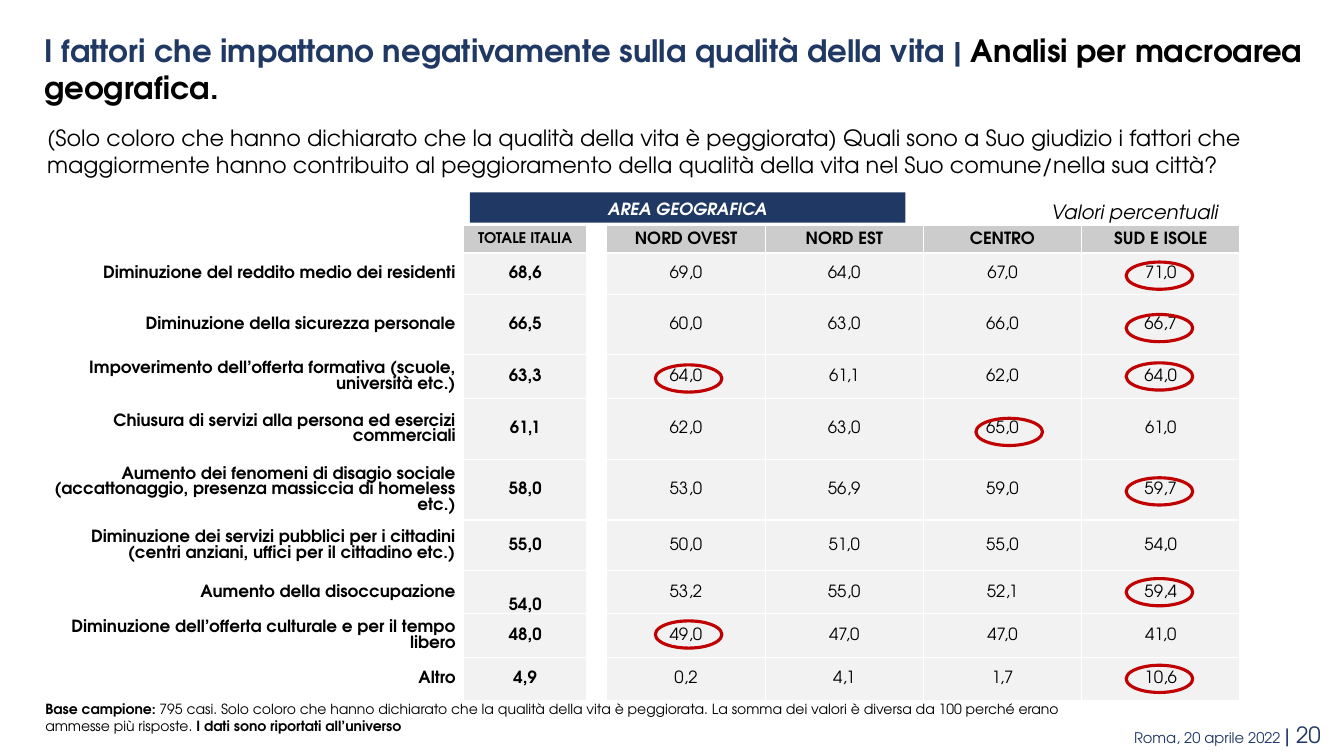
from pptx import Presentation
from pptx.util import Inches, Pt
from pptx.dml.color import RGBColor
from pptx.enum.shapes import MSO_SHAPE as Shape
from pptx.enum.text import PP_ALIGN as Align, MSO_ANCHOR as Anchor, MSO_AUTO_SIZE as Auto
from pptx.oxml import parse_xml
from pptx.oxml.ns import nsdecls

FONT = "TeX Gyre Adventor"
NAVY = RGBColor(0x20, 0x38, 0x64)
BLACK = RGBColor(0, 0, 0)
WHITE = RGBColor(255, 255, 255)
HEAD = RGBColor(0xCC, 0xCC, 0xCC)
PALE = RGBColor(0xF2, 0xF2, 0xF2)
RED = RGBColor(0xC0, 0, 0)


def write(frame, runs, align=Align.LEFT, anchor=Anchor.TOP, pad=(0.1, 0.05)):
    """Fill a text frame with (text, size, colour, bold, italic) runs."""
    form = {"word_wrap": True, "auto_size": Auto.NONE, "vertical_anchor": anchor,
            "margin_left": Inches(pad[0]), "margin_right": Inches(pad[0]),
            "margin_top": Inches(pad[1]), "margin_bottom": Inches(pad[1])}
    for key, value in form.items():
        setattr(frame, key, value)
    para = frame.paragraphs[0]
    para.alignment = align
    for text, size, color, bold, italic in runs:
        run = para.add_run()
        run.text = text
        run.font.color.rgb = color
        look = {"name": FONT, "size": Pt(size), "bold": bold, "italic": italic}
        for key, value in look.items():
            setattr(run.font, key, value)
    return para


def place(kind, box, fill=None):
    """Add a preset shape without shadow or outline."""
    shape = slide.shapes.add_shape(kind, *map(Inches, box))
    shape.shadow.inherit = False
    shape.line.fill.background()
    if fill is None:
        shape.fill.background()
    else:
        shape.fill.solid()
        shape.fill.fore_color.rgb = fill
    return shape


prs = Presentation()
prs.slide_width, prs.slide_height = Inches(13.33), Inches(7.5)
slide = prs.slides.add_slide(prs.slide_layouts[5])

# Title
title = slide.shapes.title
spot = {"left": 0.37, "top": 0.27, "width": 12.91, "height": 0.82}
for key, value in spot.items():
    setattr(title, key, Inches(value))
write(title.text_frame, [
    ("I fattori che impattano negativamente sulla qualità della vita | ", 22, NAVY, True, False),
    ("Analisi per macroarea geografica.", 22, BLACK, True, False)], pad=(0.07, 0.04))

# Sample note
note = place(Shape.RECTANGLE, (0.37, 6.9, 10.7, 0.44), WHITE)
write(note.text_frame, [
    ("Base campione:", 10, BLACK, True, False),
    (" 795 casi. Solo coloro che hanno dichiarato che la qualità della vita è peggiorata. "
     "La somma dei valori è diversa da 100 perché erano ammesse più risposte. ",
     10, BLACK, False, False),
    ("I dati sono riportati all’universo", 10, BLACK, True, False)], pad=(0.08, 0.05))

# Question, unit and footer
question = ("(Solo coloro che hanno dichiarato che la qualità della vita è peggiorata) "
            "Quali sono a Suo giudizio i fattori che maggiormente hanno contribuito al "
            "peggioramento della qualità della vita nel Suo comune/nella sua città?")
texts = [
    ((0.37, 1.18, 12.67, 0.64), [(question, 16, BLACK, False, False)], Align.LEFT),
    ((10.33, 1.93, 2.33, 0.34), [("Valori percentuali", 14, BLACK, False, True)], Align.LEFT),
    ((6.27, 7.11, 6.93, 0.37), [("Roma, 20 aprile 2022 ", 10.5, NAVY, False, False),
                                ("| 20", 16, NAVY, False, False)], Align.RIGHT),
]
for box, runs, align in texts:
    area = slide.shapes.add_textbox(*map(Inches, box))
    write(area.text_frame, runs, align)

# Band above the areas
band = place(Shape.RECTANGLE, (4.66, 1.91, 4.32, 0.3), NAVY)
para = write(band.text_frame, [("AREA GEOGRAFICA", 12, WHITE, True, True)],
             Align.CENTER, Anchor.MIDDLE)
para.line_spacing = 1.1

# Table: label, total, then the four areas
rows = [
    ("", "TOTALE ITALIA", "NORD OVEST", "NORD EST", "CENTRO", "SUD E ISOLE"),
    ("Diminuzione del reddito medio dei residenti", "68,6", "69,0", "64,0", "67,0", "71,0"),
    ("Diminuzione della sicurezza personale", "66,5", "60,0", "63,0", "66,0", "66,7"),
    ("Impoverimento dell’offerta formativa (scuole, università etc.)",
     "63,3", "64,0", "61,1", "62,0", "64,0"),
    ("Chiusura di servizi alla persona ed esercizi commerciali",
     "61,1", "62,0", "63,0", "65,0", "61,0"),
    ("Aumento dei fenomeni di disagio sociale (accattonaggio, presenza massiccia di homeless etc.)",
     "58,0", "53,0", "56,9", "59,0", "59,7"),
    ("Diminuzione dei servizi pubblici per i cittadini (centri anziani, uffici per il cittadino etc.)",
     "55,0", "50,0", "51,0", "55,0", "54,0"),
    ("Aumento della disoccupazione", "54,0", "53,2", "55,0", "52,1", "59,4"),
    ("Diminuzione dell’offerta culturale e per il tempo libero",
     "48,0", "49,0", "47,0", "47,0", "41,0"),
    ("Altro", "4,9", "0,2", "4,1", "1,7", "10,6"),
]
wide = [4.06, 0.07, 1.22, 0.06, 0.14, 1.57, 1.57, 1.57, 1.57, 0.13]
high = [0.27, 0.41, 0.6, 0.43, 0.61, 0.6, 0.5, 0.43, 0.43, 0.43]
slots = {0: 0, 2: 1, 5: 2, 6: 3, 7: 4, 8: 5}
table = slide.shapes.add_table(len(high), len(wide), Inches(0.47), Inches(2.24),
                               Inches(sum(wide)), Inches(sum(high))).table
table.first_row = table.horz_banding = False
for col, size in zip(table.columns, wide):
    col.width = Inches(size)
for row, size in zip(table.rows, high):
    row.height = Inches(size)

for r, row in enumerate(rows):
    for c in range(len(wide)):
        cell = table.cell(r, c)
        text = row[slots[c]] if c in slots else ""
        margin = {"margin_left": 0.01, "margin_right": 0.01, "margin_top": 0.01, "margin_bottom": 0}
        for key, value in margin.items():
            setattr(cell, key, Inches(value))
        cell.vertical_anchor = Anchor.BOTTOM if text == "54,0" and c == 2 else Anchor.MIDDLE
        # White cell borders
        props = cell._tc.get_or_add_tcPr()
        for side in "LRTB":
            props.append(parse_xml(
                f'<a:ln{side} {nsdecls("a")} w="12700"><a:solidFill>'
                f'<a:srgbClr val="{WHITE}"/></a:solidFill></a:ln{side}>'))
        cell.fill.solid()
        cell.fill.fore_color.rgb = WHITE if c not in slots or c == 0 else PALE if r else HEAD
        para = cell.text_frame.paragraphs[0]
        if not text:
            para._p.append(parse_xml(f'<a:endParaRPr {nsdecls("a")} sz="800"/>'))
            continue
        para.alignment = Align.CENTER if c else Align.RIGHT
        run = para.add_run()
        run.text = text
        run.font.color.rgb = BLACK
        look = {"name": FONT, "size": Pt(10.5 if r == 0 and c == 2 else 12),
                "bold": r == 0 or c < 5}
        for key, value in look.items():
            setattr(run.font, key, value)

# Rings around the highest values, by area
rings = {6.5: [3.62, 6.16], 9.68: [4.15], 11.17: [2.6, 3.12, 3.6, 4.74, 5.74, 6.6]}
for left, tops in rings.items():
    for top in tops:
        ring = place(Shape.OVAL, (left, top, 0.66, 0.27))
        ring.line.color.rgb = RED
        ring.line.width = Pt(2.25)

prs.save("out.pptx")
